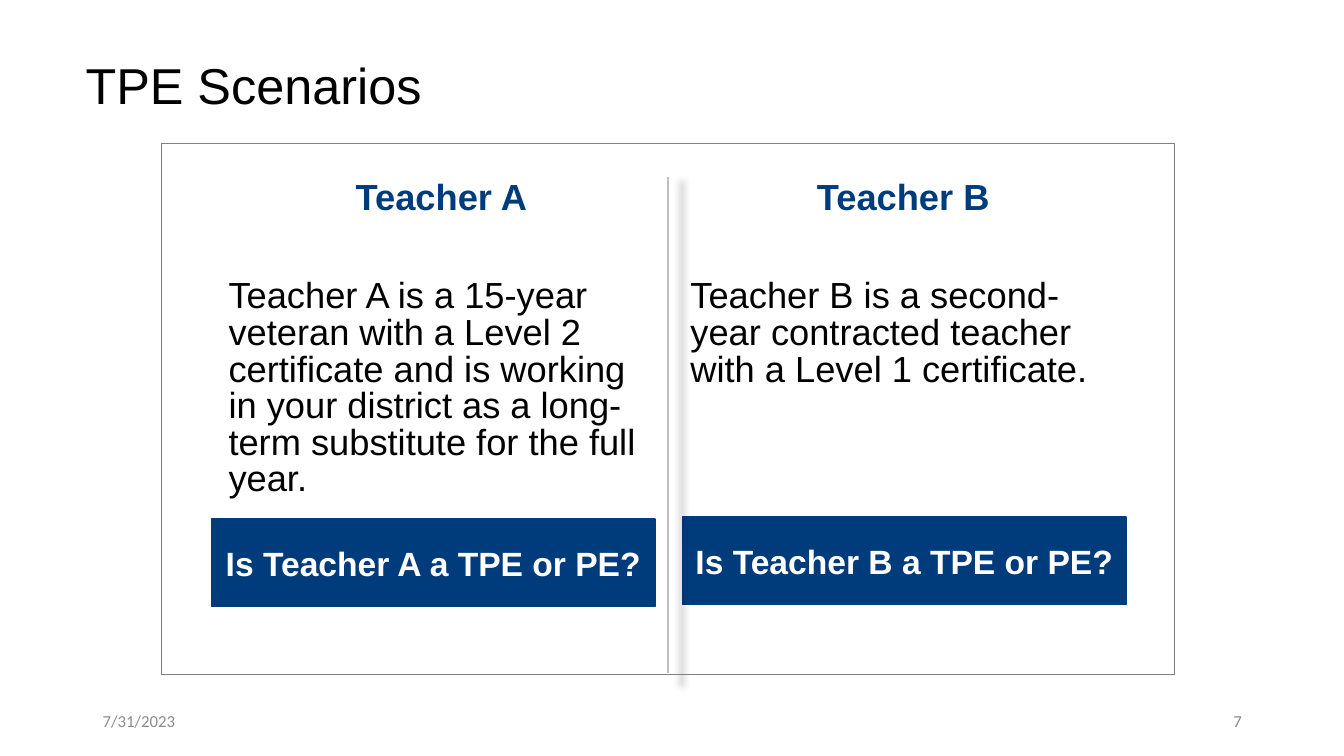
from dataclasses import dataclass

from lxml.etree import SubElement as Sub
from pptx import Presentation
from pptx.dml.color import RGBColor as RGB
from pptx.enum.shapes import MSO_CONNECTOR as Link, MSO_SHAPE as Form
from pptx.enum.text import MSO_ANCHOR as Anchor, PP_ALIGN as Align
from pptx.oxml.ns import qn
from pptx.util import Cm, Pt


@dataclass(frozen=True)
class Theme:
    navy: RGB = RGB(0x00, 0x3C, 0x7C)
    black: RGB = RGB(0, 0, 0)
    white: RGB = RGB(0xFF, 0xFF, 0xFF)
    rule: RGB = RGB(0xBF, 0xBF, 0xBF)
    frame: RGB = RGB(0x80, 0x80, 0x80)
    muted: RGB = RGB(0x8C, 0x8C, 0x8C)
    title: float = 36
    body: float = 25.9
    ask: float = 24
    foot: float = 12
    main: str = "Arial"
    small: str = "Calibri"


THEME = Theme()


def write(para, text, size, color, face=THEME.main, bold=False, align=Align.LEFT):
    para.text = text
    para.alignment = align
    font = para.font
    font.name = face
    font.size = Pt(size)
    font.bold = bold
    font.color.rgb = color


def add_box(slide, left, top, width, height, anchor=Anchor.MIDDLE):
    box = slide.shapes.add_textbox(Cm(left), Cm(top), Cm(width), Cm(height))
    frame = box.text_frame
    frame.word_wrap = True
    frame.vertical_anchor = anchor
    return frame


def add_title(slide, text):
    para = add_box(slide, 1.91, 0.38, 29.21, 3.68).paragraphs[0]
    write(para, text, THEME.title, THEME.black)
    para.line_spacing = 0.9


def add_rect(slide, left, top, width, height, edge, weight, fill=None):
    rect = slide.shapes.add_shape(
        Form.RECTANGLE, Cm(left), Cm(top), Cm(width), Cm(height))
    rect.shadow.inherit = False
    rect.line.color.rgb = edge
    rect.line.width = Pt(weight)
    if fill is None:
        rect.fill.background()
    else:
        rect.fill.solid()
        rect.fill.fore_color.rgb = fill
    return rect


def add_case(slide, left, name, story):
    frame = add_box(slide, left, 4.45, 11.23, 8.59, Anchor.TOP)
    head = frame.paragraphs[0]
    write(head, name, THEME.body, THEME.navy, bold=True, align=Align.CENTER)
    body = frame.add_paragraph()
    write(body, story, THEME.body, THEME.black)
    body.space_before = Pt(44)
    for para in (head, body):
        para.line_spacing = 0.84


def add_ask(slide, left, top, name):
    rect = add_rect(slide, left, top, 11.18, 2.21, THEME.navy, 1, THEME.navy)
    frame = rect.text_frame
    frame.word_wrap = True
    frame.vertical_anchor = Anchor.MIDDLE
    write(frame.paragraphs[0], f"Is {name} a TPE or PE?", THEME.ask,
          THEME.white, bold=True, align=Align.CENTER)


def add_rule(slide, x, top, end):
    rule = slide.shapes.add_connector(
        Link.STRAIGHT, Cm(x), Cm(top), Cm(x), Cm(end))
    rule.line.color.rgb = THEME.rule
    rule.line.width = Pt(1.5)
    glow = Sub(Sub(rule._element.spPr, qn("a:effectLst")), qn("a:outerShdw"),
               blurRad=str(Pt(5)), sx="102000", sy="102000",
               algn="ctr", rotWithShape="0")
    tone = Sub(glow, qn("a:srgbClr"), val=str(THEME.black))
    Sub(tone, qn("a:alpha"), val="40000")


def add_foot(slide, left, text, align):
    para = add_box(slide, left, 17.65, 7.62, 1.02).paragraphs[0]
    write(para, text, THEME.foot, THEME.muted, THEME.small, align=align)


def main():
    deck = Presentation()
    deck.slide_width, deck.slide_height = Cm(33.87), Cm(19.05)
    slide = deck.slides.add_slide(deck.slide_layouts[6])
    add_title(slide, "TPE Scenarios")
    cases = (
        ("Teacher A", 5.51, 5.33, 13.08,
         "Teacher A is a 15-year veteran with a Level 2 certificate and is "
         "working in your district as a long-term substitute for the full year."),
        ("Teacher B", 17.15, 17.2, 13.03,
         "Teacher B is a second-year contracted teacher with a Level 1 "
         "certificate."),
    )
    for name, left, edge, top, story in cases:
        add_case(slide, left, name, story)
        add_ask(slide, edge, top, name)
    add_rule(slide, 16.84, 4.45, 16.97)
    add_foot(slide, 2.34, "7/31/2023", Align.LEFT)
    add_foot(slide, 23.93, "7", Align.RIGHT)
    add_rect(slide, 4.06, 3.61, 25.55, 13.39, THEME.frame, 0.75)
    deck.save("out.pptx")


if __name__ == "__main__":
    main()
